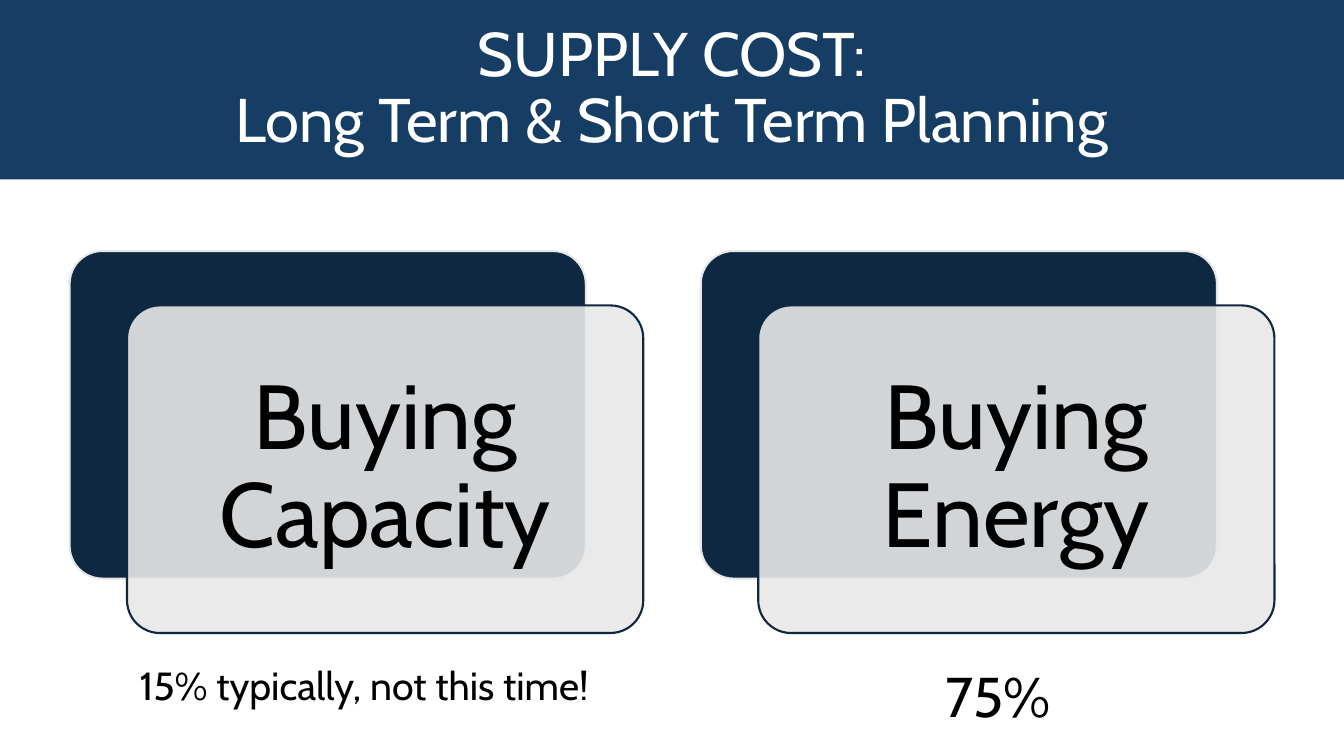
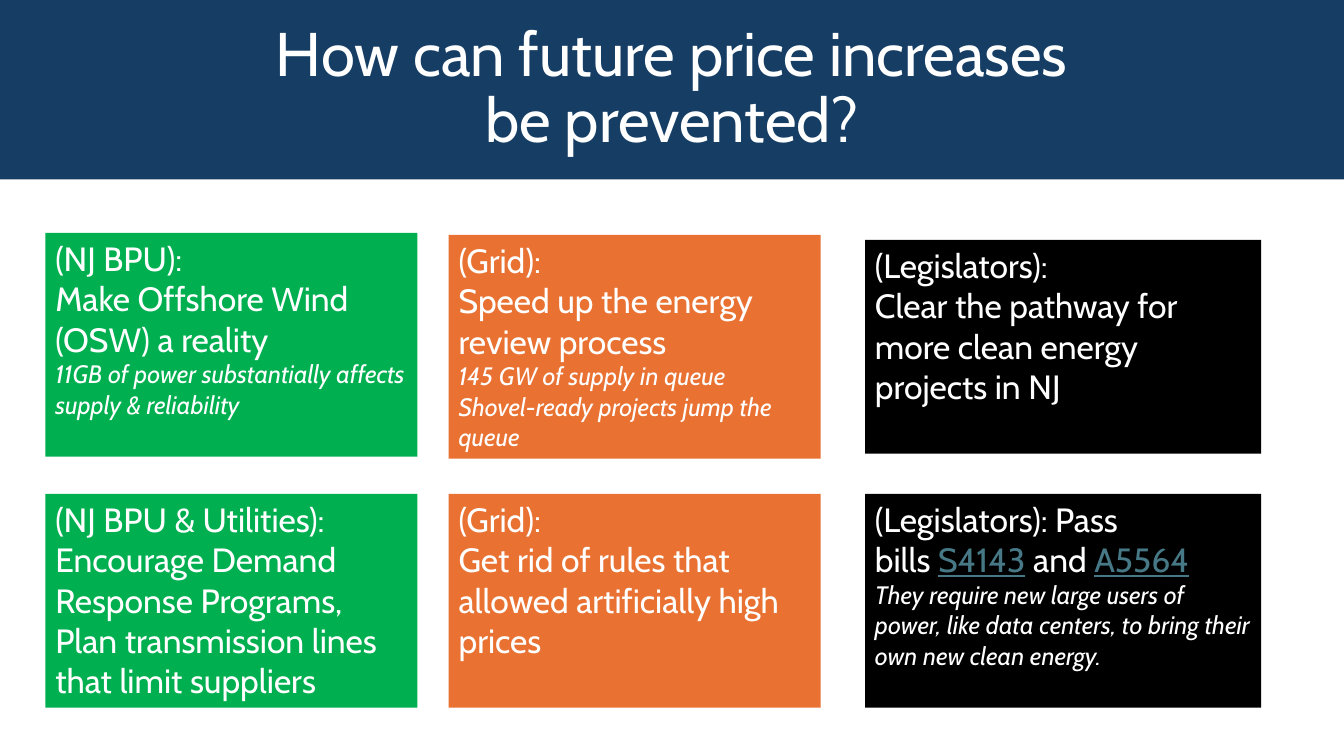
import pptx
import pptx.dml.color
import pptx.enum.shapes
import pptx.enum.text
import pptx.oxml.ns
import pptx.util
from lxml import etree

Inches = pptx.util.Inches
Align = pptx.enum.text.PP_ALIGN
Anchor = pptx.enum.text.MSO_ANCHOR
Preset = pptx.enum.shapes.MSO_SHAPE

FONT = "Cabin"
BAND, NAVY, PALE = "163E64", "0E2841", "E8E8E8"
GREEN, ORANGE, BLACK, WHITE, LINK = "00B050", "E97132", "000000", "FFFFFF", "467886"
HARD_SPACE = chr(160)  # keeps the bill numbers on one line

NOTE = {"size": 18, "italic": True}
BILL = {"color": LINK, "underline": True}

# A paragraph is a string, or a list of (text, format) runs.
COST_TITLE = ["SUPPLY COST:", "Long Term & Short Term Planning"]
COST_CARDS = ["Buying Capacity", "Buying Energy"]
COST_SHARES = [
    # text, size, left, width, height
    ("15% typically, not this time!", 28, 1.17, 4.88, 0.57),
    ("75%", 40, 9.19, 1.42, 0.77),
]

PREVENT_TITLE = ["How can future price increases", "be prevented?"]
LOWER_TOP, LOWER_HEIGHT = 4.9, 2.12
ACTORS = [
    {"color": GREEN, "left": 0.45, "width": 3.69, "upper_top": 2.31, "upper_height": 2.22,
     "upper": ["(NJ BPU):",
               "Make Offshore Wind (OSW) a reality",
               [("11GB of power substantially affects supply & reliability", NOTE)]],
     "lower": ["(NJ BPU & Utilities):",
               "Encourage Demand Response Programs, Plan transmission lines that limit suppliers"]},
    {"color": ORANGE, "left": 4.45, "width": 3.69, "upper_top": 2.33, "upper_height": 2.22,
     "upper": ["(Grid):",
               "Speed up the energy review process",
               [("145 GW of supply in queue", NOTE)],
               [("Shovel-ready projects jump the queue", NOTE)]],
     "lower": ["(Grid):",
               "Get rid of rules that allowed artificially high prices"]},
    {"color": BLACK, "left": 8.58, "width": 3.93, "upper_top": 2.38, "upper_height": 2.12,
     "upper": ["(Legislators):",
               "Clear the pathway for more clean energy projects in NJ"],
     "lower": [[("(Legislators): Pass bills" + HARD_SPACE, {}), ("S4143", BILL),
                (HARD_SPACE + "and" + HARD_SPACE, {}), ("A5564", BILL)],
               [("They require new large users of power, like data centers, "
                 "to bring their own new clean energy.", NOTE)]]},
]


def rgb(color):
    return pptx.dml.color.RGBColor.from_string(color)


def paint(shape, color):
    shape.fill.solid()
    shape.fill.fore_color.rgb = rgb(color)


def write(shape, paragraphs, size, color=BLACK, align=Align.LEFT, anchor=Anchor.TOP,
          spacing=1.0, margin=None):
    frame = shape.text_frame
    frame.word_wrap = True
    frame.auto_size = pptx.enum.text.MSO_AUTO_SIZE.NONE
    frame.vertical_anchor = anchor
    if margin is not None:
        frame.margin_left = frame.margin_right = Inches(margin)
        frame.margin_top = frame.margin_bottom = Inches(margin)
    for index, content in enumerate(paragraphs):
        paragraph = frame.add_paragraph() if index else frame.paragraphs[0]
        paragraph.alignment = align
        paragraph.line_spacing = spacing
        runs = [(content, {})] if isinstance(content, str) else content
        for text, changes in runs:
            run = paragraph.add_run()
            run.text = text
            font = run.font
            font.name = FONT
            font.size = pptx.util.Pt(changes.get("size", size))
            font.italic = changes.get("italic")
            font.underline = changes.get("underline")
            font.color.rgb = rgb(changes.get("color", color))


def add_box(slide, preset, left, top, width, height, color, outline=None, opacity=100):
    box = slide.shapes.add_shape(preset, Inches(left), Inches(top),
                                 Inches(width), Inches(height))
    box.shadow.inherit = False
    paint(box, color)
    if opacity < 100:
        fill_color = box.element.spPr.find(".//" + pptx.oxml.ns.qn("a:srgbClr"))
        etree.SubElement(fill_color, pptx.oxml.ns.qn("a:alpha"), val=str(opacity * 1000))
    if outline:
        box.line.color.rgb = rgb(outline)
        box.line.width = pptx.util.Pt(1.5)
    else:
        box.line.fill.background()
    return box


def add_titled_slide(deck, title_lines):
    slide = deck.slides.add_slide(deck.slide_layouts[5])
    title = slide.shapes.title
    title.left, title.top = 0, 0
    title.width, title.height = deck.slide_width, Inches(1.78)
    paint(title, BAND)
    write(title, title_lines, size=44, color=WHITE, align=Align.CENTER,
          anchor=Anchor.MIDDLE, spacing=0.9)
    return slide


def build_supply_cost(deck):
    slide = add_titled_slide(deck, COST_TITLE)
    left, top, width, height = 0.69, 2.49, 5.12, 3.25
    pitch, shift_x, shift_y = 6.26, 0.57, 0.54
    for column, label in enumerate(COST_CARDS):
        x = left + column * pitch
        back = add_box(slide, Preset.ROUNDED_RECTANGLE, x, top, width, height, NAVY,
                       outline=PALE)
        front = add_box(slide, Preset.ROUNDED_RECTANGLE, x + shift_x, top + shift_y,
                        width, height, PALE, outline=NAVY, opacity=90)
        for panel in (back, front):
            panel.adjustments[0] = 0.1
        write(front, [label], size=65, align=Align.CENTER, anchor=Anchor.MIDDLE,
              spacing=0.9, margin=0.34)
    for text, size, x, share_width, share_height in COST_SHARES:
        share = slide.shapes.add_textbox(Inches(x), Inches(6.51), Inches(share_width),
                                         Inches(share_height))
        write(share, [text], size=size, align=Align.CENTER)


def build_prevention(deck):
    slide = add_titled_slide(deck, PREVENT_TITLE)
    for actor in ACTORS:
        rows = [(actor["upper_top"], actor["upper_height"], actor["upper"]),
                (LOWER_TOP, LOWER_HEIGHT, actor["lower"])]
        for top, height, paragraphs in rows:
            action = add_box(slide, Preset.RECTANGLE, actor["left"], top,
                             actor["width"], height, actor["color"])
            write(action, paragraphs, size=24, color=WHITE)


def main():
    deck = pptx.Presentation()
    deck.slide_width, deck.slide_height = Inches(13.33), Inches(7.5)
    build_supply_cost(deck)
    build_prevention(deck)
    deck.save("out.pptx")


if __name__ == "__main__":
    main()
